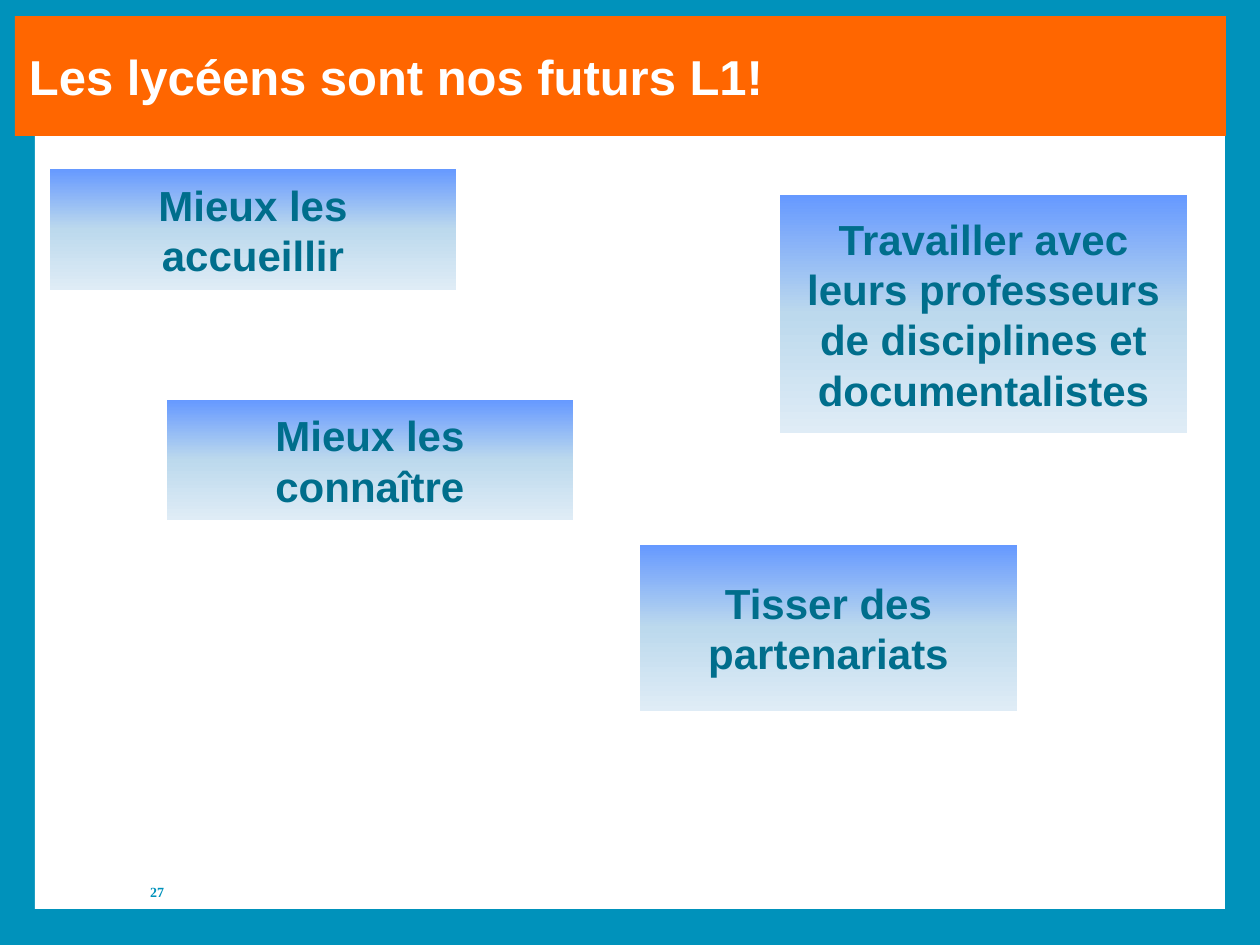
from copy import deepcopy

from pptx import Presentation
from pptx.dml.color import RGBColor
from pptx.enum.shapes import MSO_SHAPE as Shape
from pptx.enum.text import MSO_ANCHOR as Anchor, PP_ALIGN as Align
from pptx.oxml.ns import qn
from pptx.util import Emu, Pt

PX = 914400 // 126
BLUE, ORANGE, WHITE, TEAL = "0092BB", "FF6600", "FFFFFF", "006E8C"
GRADIENT = [(0, "6699FF"), (0.5, "BCD9ED"), (1, "DFECF6")]


def color(code):
    return RGBColor.from_string(code)


def add_block(page, place, fill=None, text="", size=24, ink=TEAL,
              font="Arial", align=Align.LEFT, inset=0):
    block = page.shapes.add_shape(Shape.RECTANGLE, *[Emu(n * PX) for n in place])
    block.shadow.inherit = False
    block.line.fill.background()
    if fill:
        block.fill.solid()
        block.fill.fore_color.rgb = color(fill)
    else:
        block.fill.background()
    if text:
        frame = block.text_frame
        frame.word_wrap = True
        frame.vertical_anchor = Anchor.MIDDLE
        frame.margin_left = frame.margin_right = Emu(inset * PX)
        frame.margin_top = frame.margin_bottom = 0
        para = frame.paragraphs[0]
        para.text = text
        para.alignment = align
        para.font.name = font
        para.font.size = Pt(size)
        para.font.bold = True
        para.font.color.rgb = color(ink)
    return block


deck = Presentation()
deck.slide_width, deck.slide_height = Emu(1260 * PX), Emu(945 * PX)
page = deck.slides.add_slide(deck.slide_layouts[6])

# Frame and white panel
add_block(page, (0, 0, 1260, 945), BLUE)
add_block(page, (35, 131, 1190, 778), WHITE)

# Page number and title band
add_block(page, (150, 869, 34, 45), text="27", size=8, ink=BLUE,
          font="Times New Roman")
add_block(page, (15, 16, 1211, 120), ORANGE, "Les lycéens sont nos futurs L1!",
          size=28, ink=WHITE, inset=14)

# Idea boxes with a vertical gradient
ideas = [
    ("Mieux les accueillir", (50, 169, 406, 121)),
    ("Mieux les connaître", (167, 400, 406, 120)),
    ("Travailler avec leurs professeurs de disciplines et documentalistes",
     (780, 195, 407, 238)),
    ("Tisser des partenariats", (640, 545, 377, 166)),
]
for text, place in ideas:
    box = add_block(page, place, text=text, align=Align.CENTER, inset=14)
    box.fill.gradient()
    box.fill.gradient_angle = 270
    stop_list = next(box.element.iter(qn("a:gsLst")))
    stop_list.insert(1, deepcopy(stop_list[0]))
    for stop, (position, code) in zip(box.fill.gradient_stops, GRADIENT):
        stop.position = position
        stop.color.rgb = color(code)

deck.save("out.pptx")
